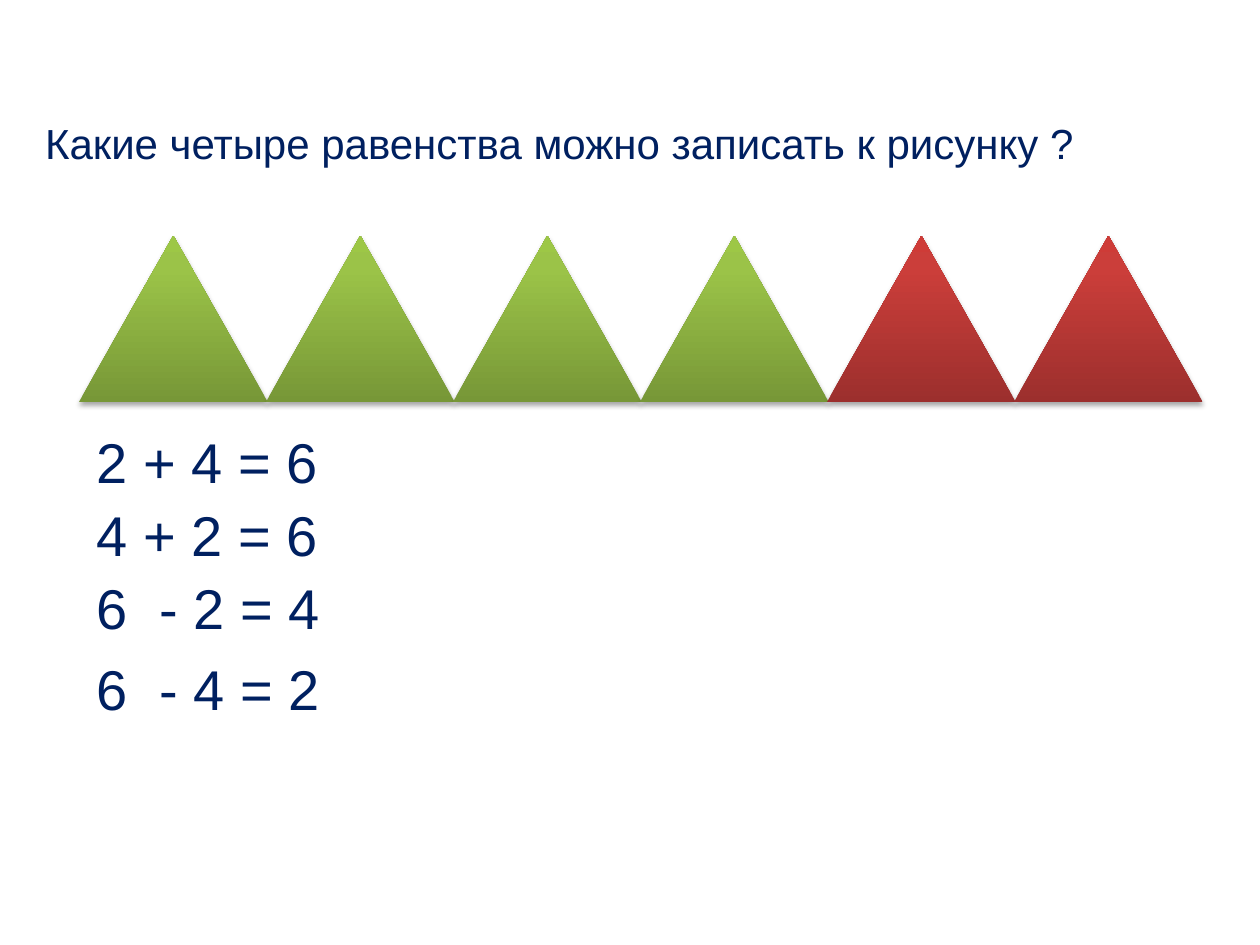
from dataclasses import dataclass

from lxml import etree
from pptx import Presentation
from pptx.dml.color import RGBColor
from pptx.enum.shapes import MSO_SHAPE
from pptx.enum.text import MSO_AUTO_SIZE
from pptx.oxml.ns import qn
from pptx.slide import Slide
from pptx.util import Cm, Pt

TRIANGLE = MSO_SHAPE.ISOSCELES_TRIANGLE
GROW = MSO_AUTO_SIZE.SHAPE_TO_FIT_TEXT


@dataclass(frozen=True)
class Theme:
    font: str = "Arial"
    ink: str = "002060"
    shade: str = "000000"
    green: tuple = ((0, "779737"), (80, "9BC348"), (100, "9DC746"))
    red: tuple = ((0, "9C2F2D"), (80, "CB3E3A"), (100, "CE3B37"))
    ask: int = 24
    sum: int = 32


@dataclass(frozen=True)
class Label:
    text: str
    left: float
    top: float
    width: float
    height: float
    size: int


THEME = Theme()
LEFT, TOP, WIDTH, HEIGHT, STEP = 1.59, 4.75, 3.81, 3.36, 3.77
TAB = 1.26  # where the minus sign starts, from the text edge
COLORS = [THEME.green] * 4 + [THEME.red] * 2
SUMS = [
    ("2 + 4 = 6", 8.5),
    ("4 + 2 = 6", 9.97),
    ("6\t- 2 = 4", 11.43),
    ("6\t- 4 = 2", 13.06),
]
LABELS = [
    Label("Какие четыре равенства можно записать к рисунку ?",
          0.66, 2.24, 22, 1.27, THEME.ask),
    *(Label(text, 1.7, top, 5.36, 1.62, THEME.sum) for text, top in SUMS),
]


def add_node(base, tag: str, **values):
    """Append a child element with the given attributes."""
    return etree.SubElement(
        base, qn(tag), {key: str(value) for key, value in values.items()})


def add_label(slide: Slide, label: Label) -> None:
    box = slide.shapes.add_textbox(
        Cm(label.left), Cm(label.top), Cm(label.width), Cm(label.height))
    frame = box.text_frame
    frame.word_wrap = True
    frame.auto_size = GROW
    line = frame.paragraphs[0]
    run = line.add_run()
    run.text = label.text
    if "\t" in label.text:
        tabs = add_node(line._p.get_or_add_pPr(), "a:tabLst")
        add_node(tabs, "a:tab", pos=int(Cm(TAB)), algn="l")
    style = {"name": THEME.font, "size": Pt(label.size), "bold": False}
    for key, value in style.items():
        setattr(run.font, key, value)
    run.font.color.rgb = RGBColor.from_string(THEME.ink)


def add_peak(slide: Slide, place: int, stops: tuple) -> None:
    """Draw one triangle of the row, shaded from its base upwards."""
    peak = slide.shapes.add_shape(
        TRIANGLE, Cm(LEFT + place * STEP), Cm(TOP), Cm(WIDTH), Cm(HEIGHT))
    props = peak._element.spPr
    fill = add_node(props, "a:gradFill", rotWithShape=1)
    marks = add_node(fill, "a:gsLst")
    for spot, color in stops:
        mark = add_node(marks, "a:gs", pos=spot * 1000)
        add_node(mark, "a:srgbClr", val=color)
    add_node(fill, "a:lin", ang=270 * 60000, scaled=0)
    peak.line.fill.background()
    peak.shadow.inherit = False
    cast = add_node(props.find(qn("a:effectLst")), "a:outerShdw",
                    blurRad=int(Pt(3.1)), dist=int(Pt(1.8)),
                    dir=90 * 60000, rotWithShape=0)
    tint = add_node(cast, "a:srgbClr", val=THEME.shade)
    add_node(tint, "a:alpha", val=35000)


def main() -> None:
    deck = Presentation()
    deck.slide_width, deck.slide_height = Cm(25.4), Cm(19.05)
    slide = deck.slides.add_slide(deck.slide_layouts[6])
    for label in LABELS:
        add_label(slide, label)
    for place, stops in enumerate(COLORS):
        add_peak(slide, place, stops)
    deck.save("out.pptx")


if __name__ == "__main__":
    main()
